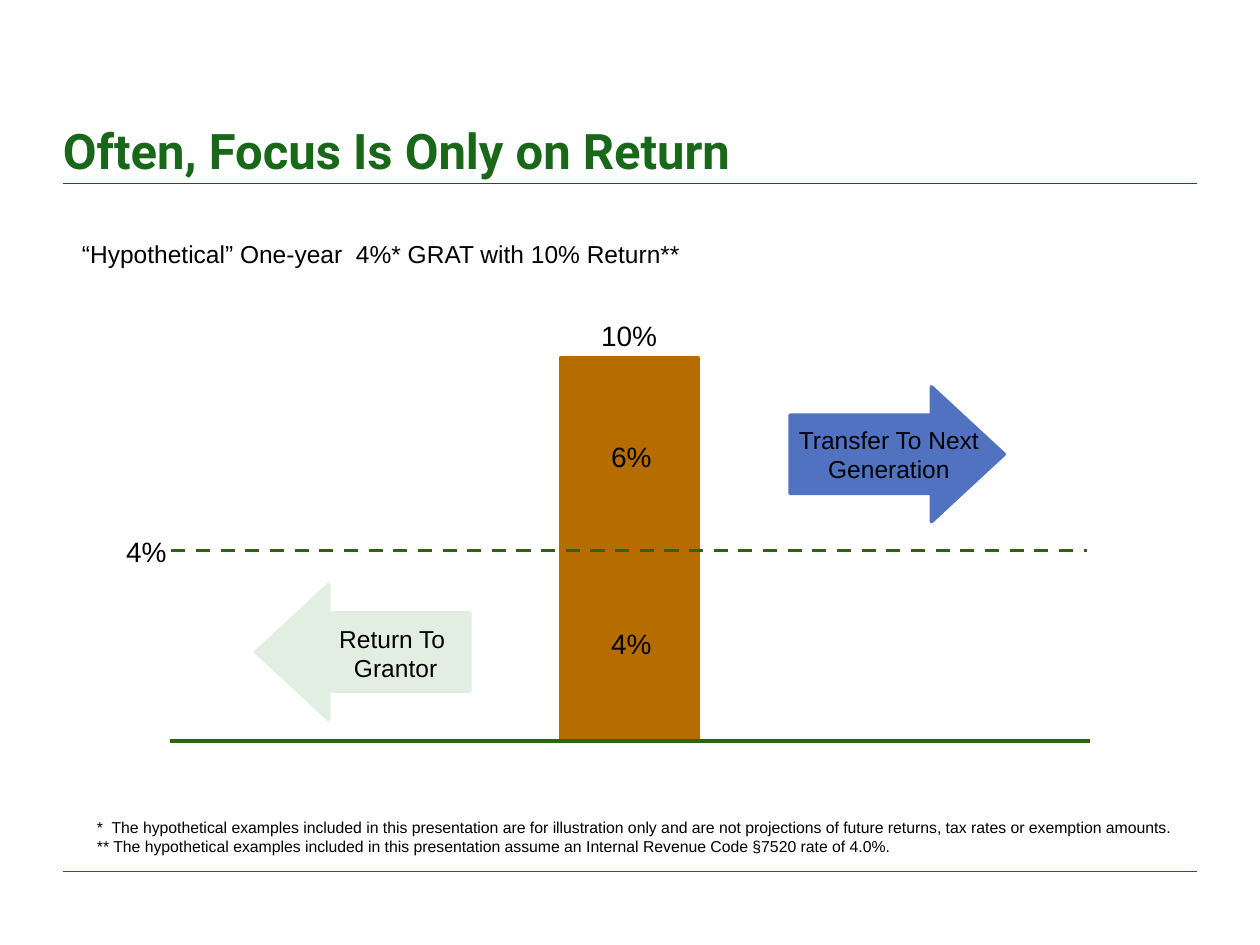
from pptx import Presentation
from pptx.dml.color import RGBColor
from pptx.enum.dml import MSO_LINE
from pptx.enum.shapes import MSO_CONNECTOR, MSO_SHAPE
from pptx.enum.text import MSO_ANCHOR, PP_ALIGN
from pptx.oxml.ns import qn
from pptx.util import Inches, Pt
from lxml.etree import SubElement

BLACK = RGBColor(0x00, 0x00, 0x00)
TITLE_GREEN = RGBColor(0x19, 0x68, 0x19)
RULE_GREEN = RGBColor(0x00, 0x66, 0x00)
AXIS_GREEN = RGBColor(0x2D, 0x64, 0x11)
PALE_GREEN = RGBColor(0xE3, 0xEE, 0xE3)
BAR_BROWN = RGBColor(0xB6, 0x6D, 0x00)
TRANSFER_BLUE = RGBColor(0x50, 0x72, 0xC0)


class SlideBuilder:
    """Holds the text style and the current slide, and adds elements to it."""

    font_name = "Arial"
    insets = (0.09, 0.04)

    def __init__(self, slide):
        self.slide = slide

    def line(self, left, right, y, color, weight, dash=None):
        connector = self.slide.shapes.add_connector(
            MSO_CONNECTOR.STRAIGHT, Inches(left), Inches(y), Inches(right), Inches(y))
        connector.line.color.rgb = color
        connector.line.width = Pt(weight)
        if dash:
            connector.line.dash_style = dash
        SubElement(connector._element.spPr, qn("a:effectLst"))

    def block(self, preset, box, color, weight, adjustments=(), rotation=0):
        shape = self.slide.shapes.add_shape(preset, *map(Inches, box))
        for index, value in enumerate(adjustments):
            shape.adjustments[index] = value
        shape.rotation = rotation
        shape.shadow.inherit = False
        shape.fill.solid()
        shape.fill.fore_color.rgb = color
        shape.line.color.rgb = color
        shape.line.width = Pt(weight)

    def text(self, box, content, size, align=PP_ALIGN.LEFT, wrap=True,
             insets=insets, anchor=MSO_ANCHOR.TOP, font_name=font_name,
             color=BLACK, bold=False):
        frame = self.slide.shapes.add_textbox(*map(Inches, box)).text_frame
        frame.word_wrap = wrap
        frame.vertical_anchor = anchor
        frame.margin_left = frame.margin_right = Inches(insets[0])
        frame.margin_top = frame.margin_bottom = Inches(insets[1])
        frame.text = content
        for paragraph in frame.paragraphs:
            paragraph.alignment = align
            paragraph.font.name = font_name
            paragraph.font.size = Pt(size)
            paragraph.font.bold = bold
            paragraph.font.color.rgb = color

    def heading(self, box, content, size, **style):
        self.text(box, content, size, insets=(0, 0), anchor=MSO_ANCHOR.BOTTOM, **style)

    def percent(self, left, top, content):
        self.text((left, top, 0.69, 0.36), content, 16)

    def flow_arrow(self, left, top, color, rotation=0):
        self.block(MSO_SHAPE.LEFT_ARROW, (left, top, 1.7, 1.07), color, 2,
                   (0.58, 0.54), rotation)


def main():
    deck = Presentation()
    deck.slide_width, deck.slide_height = Inches(10), Inches(7.5)
    builder = SlideBuilder(deck.slides.add_slide(deck.slide_layouts[6]))

    builder.line(0.5, 9.5, 1.46, RULE_GREEN, 0.5)
    builder.line(0.5, 9.5, 6.92, TITLE_GREEN, 0.5)
    builder.heading((0.5, 0.88, 9, 0.54), "Often, Focus Is Only on Return", 28,
                    font_name="Roboto", color=TITLE_GREEN, bold=True)

    builder.block(MSO_SHAPE.RECTANGLE, (4.45, 2.84, 1.09, 3.03), BAR_BROWN, 2.25)
    builder.line(1.35, 8.65, 5.88, AXIS_GREEN, 2)
    builder.line(1.36, 8.63, 4.37, AXIS_GREEN, 2, MSO_LINE.DASH)
    for left, top, share in ((4.76, 3.45, "6%"), (0.91, 4.2, "4%"),
                             (4.76, 4.93, "4%"), (4.68, 2.49, "10%")):
        builder.percent(left, top, share)

    builder.flow_arrow(2.03, 4.64, PALE_GREEN)
    builder.text((2.48, 4.91, 1.32, 0.56), "Return To \vGrantor", 14, PP_ALIGN.CENTER)
    builder.flow_arrow(6.27, 3.07, TRANSFER_BLUE, rotation=180)
    builder.text((6, 3.33, 2.11, 0.56), "Transfer To Next Generation", 14,
                 PP_ALIGN.CENTER)

    builder.text(
        (0.68, 6.45, 8.77, 0.55),
        "*  The hypothetical examples included in this presentation are for illustration "
        "only and are not projections of future returns, tax rates or exemption amounts.\n"
        "** The hypothetical examples included in this presentation assume an Internal "
        "Revenue Code §7520 rate of 4.0%.",
        9, wrap=False)
    builder.heading((0.65, 1.59, 8.65, 0.54),
                    "“Hypothetical” One-year  4%* GRAT with 10% Return**", 14)

    deck.save("out.pptx")


if __name__ == "__main__":
    main()
